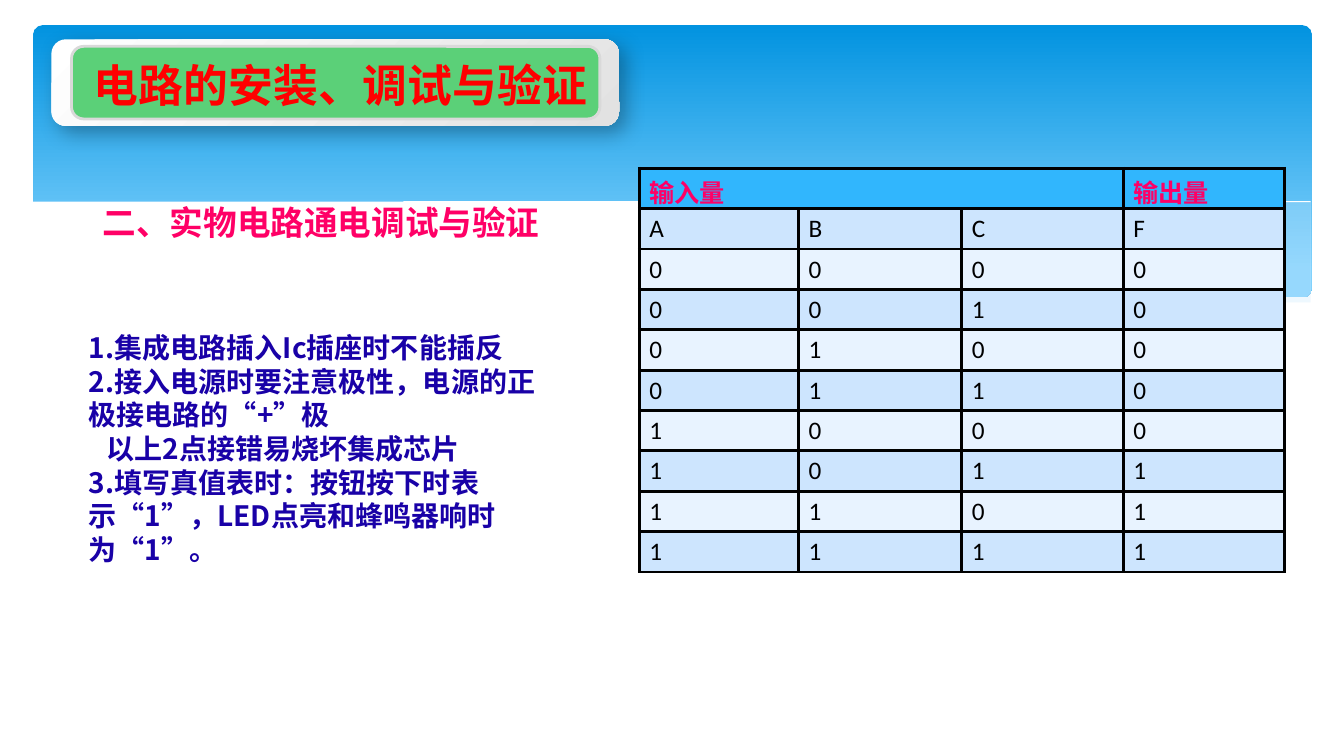
from pptx import Presentation
from pptx.dml.color import RGBColor
from pptx.enum.shapes import MSO_SHAPE
from pptx.enum.text import MSO_ANCHOR, MSO_AUTO_SIZE, PP_ALIGN
from pptx.oxml import parse_xml
from pptx.oxml.ns import nsdecls
from pptx.util import Inches, Pt

ROUNDED = MSO_SHAPE.ROUNDED_RECTANGLE
TOP, MIDDLE = MSO_ANCHOR.TOP, MSO_ANCHOR.MIDDLE
LEFT, CENTER = PP_ALIGN.LEFT, PP_ALIGN.CENTER
NO_AUTOFIT = MSO_AUTO_SIZE.NONE
LATIN, CHINESE = "Calibri", "Noto Sans CJK SC"

COLORS = {
    "sky_top": "0293E0", "sky_bottom": "83D3FE", "mist": "C6E7FC",
    "white": "FFFFFF", "silver": "E2E2E2", "edge": "D9D9D9",
    "green": "5BD078", "red": "FF0000", "pink": "FF0066",
    "navy": "1901A7", "black": "000000",
    "header": "31B6FD", "band_dark": "CDE5FE", "band_light": "E8F3FF",
}

TITLE = "电路的安装、调试与验证"
SUBTITLE = "二、实物电路通电调试与验证"
STEPS = [
    ("1.集成电路插入Ic插座时不能插反", 0),
    ("2.接入电源时要注意极性，电源的正极接电路的“+”极", 0),
    ("以上2点接错易烧坏集成芯片", 0.18),
    ("3.填写真值表时：按钮按下时表示“1”，LED点亮和蜂鸣器响时为“1”。", 0),
]
HEADER = ["输入量", "", "", "输出量"]
VARIABLES = ["A", "B", "C", "F"]
OUTPUTS = "00000111"
TRUTH_ROWS = [list(f"{number:03b}") + [output] for number, output in enumerate(OUTPUTS)]
COLUMN_WIDTHS = [1.58, 1.62, 1.6, 1.6]
ROW_HEIGHT = 0.4

RIGHT_MIST = [
    (13.01, 1.99), (12.65, 2.04), (12.27, 2.09), (11.88, 2.16), (11.47, 2.23),
    (10.73, 2.37), (10.05, 2.48), (9.41, 2.57), (8.82, 2.65), (9.21, 2.69),
    (9.58, 2.72), (9.93, 2.75), (10.25, 2.77), (10.71, 2.78), (11.26, 2.77),
    (11.63, 2.74), (11.96, 2.7), (12.28, 2.65), (12.57, 2.59), (13.01, 2.47),
]
CENTER_MIST = [
    (11.9, 2.73), (11.54, 2.69), (11.16, 2.65), (10.33, 2.54), (9.41, 2.4),
    (8.38, 2.22), (7.98, 2.14), (7.59, 2.08), (7.21, 2.03), (6.86, 1.98),
    (6.52, 1.94), (6.19, 1.91), (5.89, 1.89), (5.6, 1.87), (5.06, 1.86),
    (4.59, 1.86), (4.18, 1.88), (3.82, 1.91), (4.31, 1.96), (4.83, 2.03),
    (5.39, 2.11), (5.99, 2.22), (6.54, 2.32), (7.06, 2.4), (7.55, 2.48),
    (8.02, 2.55), (8.46, 2.61), (8.87, 2.66), (9.26, 2.7), (9.63, 2.74),
    (9.98, 2.76), (10.46, 2.78), (11.04, 2.78), (11.56, 2.76),
]
LONG_CREST = [
    (4.12, 1.95), (4.38, 1.92), (4.7, 1.89), (5.16, 1.87), (5.77, 1.87),
    (6.25, 1.89), (6.8, 1.92), (7.42, 1.97), (8.11, 2.04), (8.86, 2.13),
    (9.7, 2.26), (10.6, 2.41), (11.58, 2.61), (12.1, 2.72),
]
RIGHT_CREST = [
    (8.18, 2.57), (8.7, 2.46), (9.27, 2.35), (9.97, 2.23), (10.75, 2.1),
    (11.55, 1.99), (11.94, 1.94), (12.32, 1.9), (12.67, 1.87), (13, 1.85),
]
WHITE_WAVE = [
    (13.03, 2.46), (12.79, 2.53), (12.53, 2.59), (12.27, 2.65), (11.98, 2.69),
    (11.67, 2.73), (11.34, 2.75), (10.97, 2.77), (10.58, 2.76), (10.15, 2.75),
    (9.69, 2.72), (9.18, 2.68), (8.63, 2.62), (8.04, 2.54), (7.4, 2.45),
    (6.71, 2.33), (5.96, 2.2), (5.58, 2.13), (5.21, 2.07), (4.86, 2.02),
    (4.53, 1.97), (4.21, 1.94), (3.9, 1.91), (3.61, 1.88), (3.33, 1.86),
    (3.07, 1.85), (2.82, 1.84), (2.35, 1.84), (1.94, 1.85), (1.58, 1.87),
    (1.27, 1.91), (1.01, 1.95), (0.79, 1.99), (0.61, 2.03), (0.48, 2.07),
    (0.31, 2.13), (0.31, 3.29), (13.03, 3.29),
]
WAVES = [
    (RIGHT_MIST, "mist", 29),
    (CENTER_MIST, "mist", 40),
    (LONG_CREST, None, None),
    (RIGHT_CREST, None, None),
    (WHITE_WAVE, "white", 100),
]


def color(name):
    return RGBColor.from_string(COLORS[name])


def add_wave(slide, points, fill, opacity):
    builder = slide.shapes.build_freeform(*points[0], scale=Inches(1))
    builder.add_line_segments(points[1:], close=fill is not None)
    shape = builder.convert_to_shape()
    shape.shadow.inherit = False
    if fill is None:
        shape.fill.background()
        shape.line.color.rgb = color("white")
        shape.line.width = 0
        return
    shape.fill.solid()
    shape.fill.fore_color.rgb = color(fill)
    shape.line.fill.background()
    if opacity < 100:
        tint = shape.element.spPr.find(".//{*}solidFill/{*}srgbClr")
        tint.append(parse_xml(f'<a:alpha {nsdecls("a")} val="{opacity * 1000}"/>'))


def add_panel(slide, box, radius=0.1667):
    shape = slide.shapes.add_shape(ROUNDED, *map(Inches, box))
    shape.adjustments[0] = radius
    shape.shadow.inherit = False
    shape.line.fill.background()
    return shape


def fill_gradient(shape, angle, stops):
    shape.fill.gradient()
    shape.fill.gradient_angle = angle
    for stop, (position, name) in zip(shape.fill.gradient_stops, stops):
        stop.position = position
        stop.color.rgb = color(name)


def format_runs(paragraph, font_name, size, color_name, bold=True):
    for run in paragraph.runs:
        run.font.name = font_name
        run.font.size = Pt(size)
        run.font.bold = bold
        run.font.color.rgb = color(color_name)


def place_text(slide, shape, box, anchor):
    shape.left, shape.top, shape.width, shape.height = map(Inches, box)
    shape.text_frame.vertical_anchor = anchor
    shape.text_frame.auto_size = NO_AUTOFIT
    slide.shapes.element.append(shape.element)


def add_truth_table(slide):
    rows = [HEADER, VARIABLES] + TRUTH_ROWS
    frame = slide.shapes.add_table(
        len(rows), len(COLUMN_WIDTHS), Inches(6.34), Inches(1.67),
        Inches(sum(COLUMN_WIDTHS)), Inches(ROW_HEIGHT * len(rows)))
    table = frame.table
    for column, width in zip(table.columns, COLUMN_WIDTHS):
        column.width = Inches(width)
    for row_index, values in enumerate(rows):
        table.rows[row_index].height = Inches(ROW_HEIGHT)
        is_header = row_index == 0
        band = "header" if is_header else ("band_light", "band_dark")[row_index % 2]
        for column_index, value in enumerate(values):
            cell = table.cell(row_index, column_index)
            cell.text = value
            format_runs(cell.text_frame.paragraphs[0], LATIN, 18,
                        "pink" if is_header else "black", is_header)
            cell.fill.solid()
            cell.fill.fore_color.rgb = color(band)
            properties = cell._tc.get_or_add_tcPr()
            for index, side in enumerate("LRTB"):
                properties.insert(index, parse_xml(
                    f'<a:ln{side} {nsdecls("a")} w="{Pt(2.25)}"><a:solidFill>'
                    f'<a:srgbClr val="{COLORS["black"]}"/></a:solidFill></a:ln{side}>'))
    table.cell(0, 0).merge(table.cell(0, 2))


def main():
    presentation = Presentation()
    presentation.slide_width, presentation.slide_height = Inches(13.33), Inches(7.5)
    slide = presentation.slides.add_slide(presentation.slide_layouts[1])
    title, steps = slide.shapes.title, slide.placeholders[1]

    sky = add_panel(slide, (0.33, 0.25, 12.68, 2.7), 0.034)
    fill_gradient(sky, 270, [(0, "sky_top"), (0.9, "sky_bottom")])
    for wave in WAVES:
        add_wave(slide, *wave)

    subtitle = slide.shapes.add_textbox(*map(Inches, (0.92, 1.95, 4.53, 0.8)))
    subtitle.text_frame.text = SUBTITLE
    subtitle.text_frame.word_wrap = False
    format_runs(subtitle.text_frame.paragraphs[0], LATIN, 24, "pink")

    add_truth_table(slide)

    place_text(slide, steps, (0.78, 3.23, 4.76, 2.43), TOP)
    steps.text_frame.text = "\n".join(text for text, _ in STEPS)
    for paragraph, (_, indent) in zip(steps.text_frame.paragraphs, STEPS):
        paragraph.alignment = LEFT
        paragraph.space_before = Pt(0)
        paragraph.line_spacing = Pt(24)
        format_runs(paragraph, CHINESE, 20, "navy")
        properties = paragraph._p.get_or_add_pPr()
        properties.set("marL", "0")
        properties.set("indent", str(Inches(indent)))
        properties.append(parse_xml(f'<a:buNone {nsdecls("a")}/>'))

    plate = add_panel(slide, (0.51, 0.39, 5.63, 0.86))
    fill_gradient(plate, 315, [(0, "white"), (1, "silver")])
    plate.element.spPr.find("{*}effectLst").append(parse_xml(
        f'<a:outerShdw {nsdecls("a")} blurRad="{Pt(15)}" dist="{Pt(7)}" dir="2700000">'
        f'<a:srgbClr val="{COLORS["black"]}"><a:alpha val="30000"/></a:srgbClr></a:outerShdw>'))
    label = add_panel(slide, (0.71, 0.46, 5.24, 0.72))
    label.fill.solid()
    label.fill.fore_color.rgb = color("green")
    label.line.color.rgb = color("edge")
    label.line.width = Pt(2)

    place_text(slide, title, (0.71, 0.53, 5.34, 0.63), MIDDLE)
    title.text_frame.text = TITLE
    heading = title.text_frame.paragraphs[0]
    heading.alignment = CENTER
    heading.line_spacing = Pt(38)
    format_runs(heading, CHINESE, 32, "red")

    presentation.save("out.pptx")


if __name__ == "__main__":
    main()
